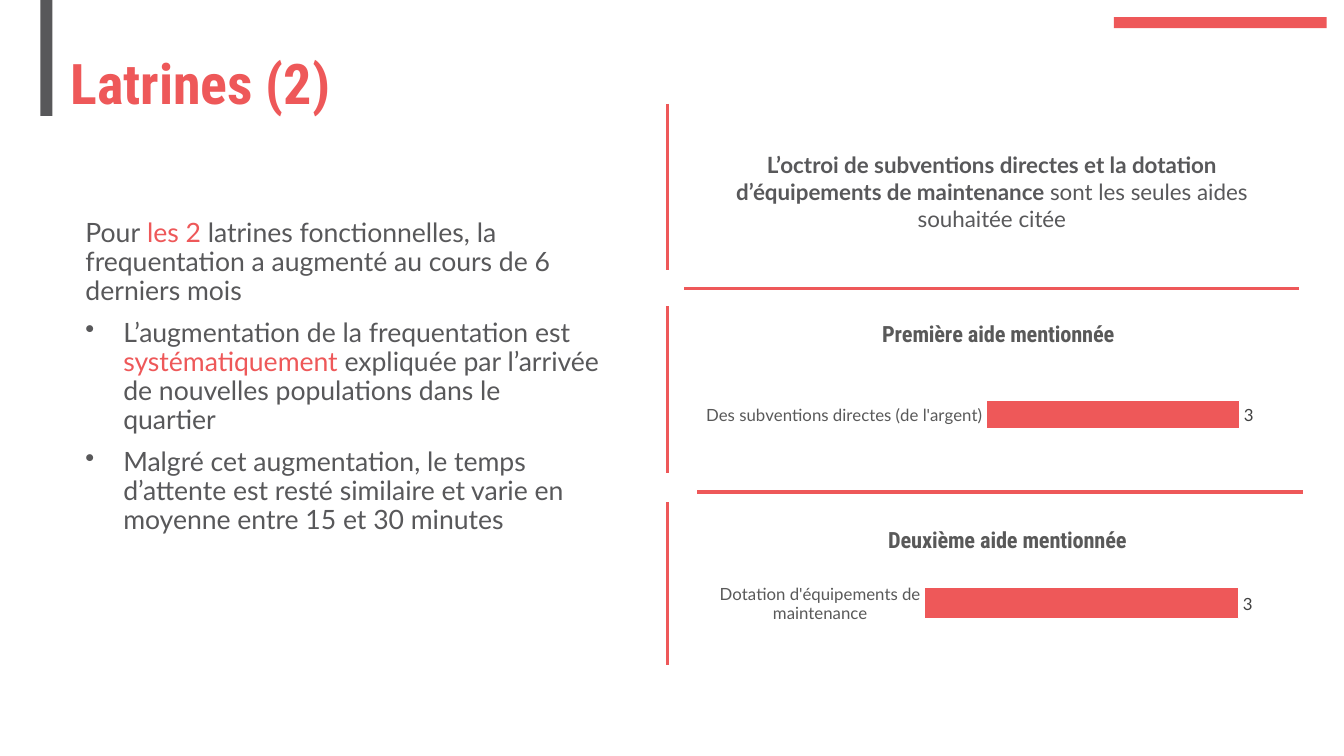
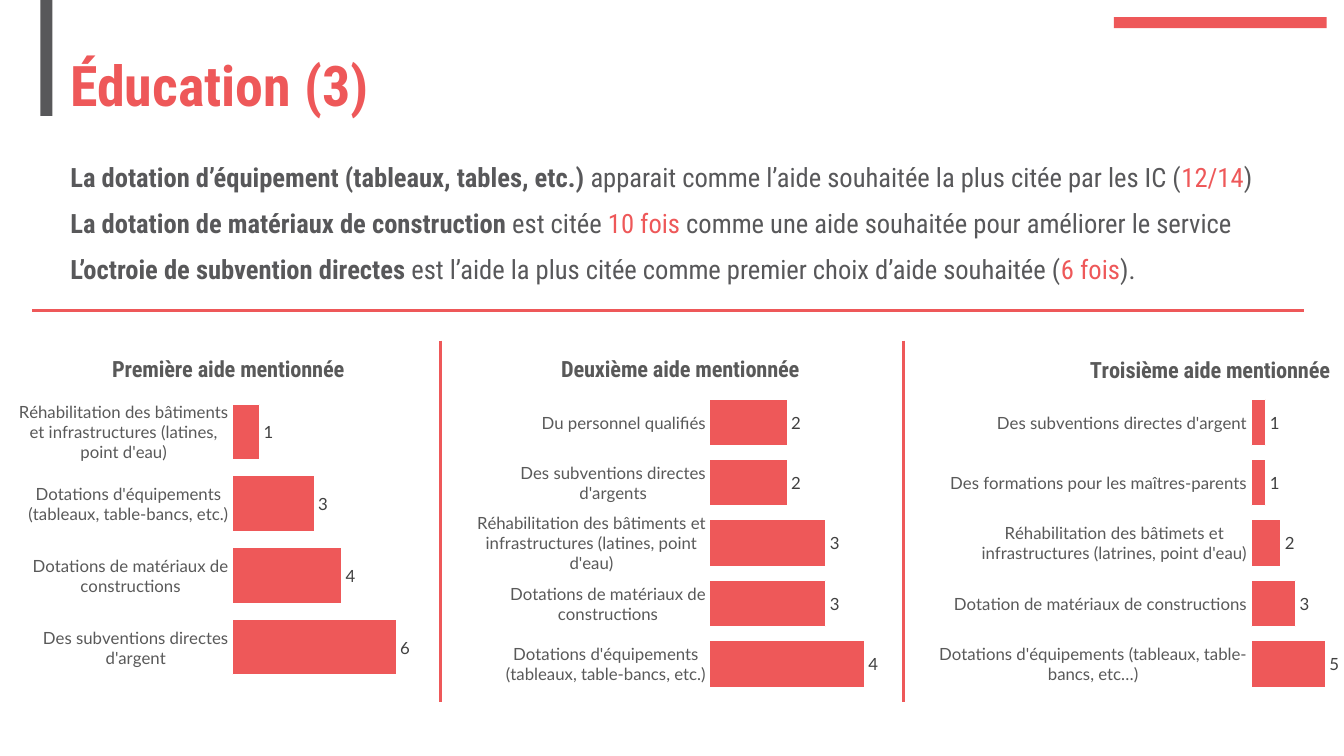
"""Build two survey slides: latrines and education."""
import pptx
import pptx.chart.data
import pptx.dml.color
import pptx.enum.chart
import pptx.enum.shapes
import pptx.enum.text
import pptx.oxml
import pptx.oxml.ns
import pptx.util
from lxml import etree

Pt = pptx.util.Pt
RGBColor = pptx.dml.color.RGBColor
qn = pptx.oxml.ns.qn

RED = RGBColor(0xEE, 0x58, 0x59)
GREY = RGBColor(0x58, 0x58, 0x5A)
AXIS_GREY = RGBColor(0x59, 0x59, 0x59)
LABEL_GREY = RGBColor(0x40, 0x40, 0x40)
WHITE = RGBColor(0xFF, 0xFF, 0xFF)
BODY_FONT = "Lato"
HEAD_FONT = "Roboto Condensed"
BULLET_INDENT = 27

BANDS = [((795.6, 12.2, 152, 7.9), RED), ((28.8, 0, 8.6, 82.8), GREY)]
MIDDLE = 476.6
COLUMN_STEP = 322.9


def column_frame(index):
    """Return the frame of one of the three education charts."""
    return (11.5 + index * COLUMN_STEP, 241.2, 303.1, 259.9)


SLIDES = [
    {
        "title": "Latrines (2)",
        "title_height": 46.1,
        "texts": [
            {
                "frame": (495.4, 104.4, 426.2, 87.8), "font": BODY_FONT, "size": 16,
                "align": pptx.enum.text.PP_ALIGN.CENTER, "spacing": 1.0,
                "paras": [
                    (False, [("L’octroi de subventions directes et la dotation d’équipements de maintenance ", "bold"),
                             ("sont les seules aides souhaitée citée", "plain")]),
                ],
            },
            {
                "frame": (54, 153.4, 381.6, 233.3), "font": BODY_FONT, "size": 19,
                "align": pptx.enum.text.PP_ALIGN.LEFT, "spacing": 0.9,
                "paras": [
                    (False, [("Pour", "plain"), (" les 2 ", "red"),
                             ("latrines fonctionnelles, la frequentation a augmenté au cours de 6 derniers mois", "plain")]),
                    (True, [("L’augmentation de la frequentation est ", "plain"), ("systématiquement ", "red"),
                            ("expliquée par l’arrivée de nouvelles populations dans le quartier", "plain")]),
                    (True, [("Malgré cet augmentation, le temps d’attente est resté similaire et varie "
                             "en moyenne entre 15 et 30 minutes", "plain")]),
                ],
            },
        ],
        "charts": [
            {
                "title": "Première aide mentionnée", "frame": (501.8, 218.9, 422.6, 126),
                "plot": (0.48, 0.51, 0.5, 0.41), "top": 3.5,
                "bars": [("", None), ("Des subventions directes (de l'argent)", 3)],
            },
            {
                "title": "Deuxième aide mentionnée", "frame": (508.3, 366.5, 422.6, 108.7),
                "plot": (0.36, 0.46, 0.62, 0.53), "top": 3.5,
                "bars": [("", None), ("Dotation d'équipements de maintenance", 3)],
            },
        ],
        "rules": [
            (MIDDLE, 74.2, MIDDLE, 193), (MIDDLE, 218.9, MIDDLE, 337.7), (MIDDLE, 358.6, MIDDLE, 475.2),
            (488.9, 205.9, 928.1, 205.9), (498.2, 351.4, 931, 351.4),
        ],
    },
    {
        "title": "Éducation (3)",
        "title_height": 48.2,
        "texts": [
            {
                "frame": (43.2, 111.6, 882, 103.7), "font": HEAD_FONT, "size": 19,
                "align": pptx.enum.text.PP_ALIGN.LEFT, "spacing": 1.0,
                "paras": [
                    (False, [("La dotation d’équipement (tableaux, tables, etc.) ", "bold"),
                             ("apparait comme l’aide souhaitée la plus citée par les IC (", "plain"),
                             ("12/14", "red"), (")", "plain")]),
                    (False, [("La dotation de matériaux de construction ", "bold"), ("est citée ", "plain"),
                             ("10 fois ", "red"), ("comme une aide souhaitée pour améliorer le service", "plain")]),
                    (False, [("L’octroie de subvention directes ", "bold"),
                             ("est l’aide la plus citée comme premier choix d’aide souhaitée (", "plain"),
                             ("6 fois", "red"), (").", "plain")]),
                ],
            },
        ],
        "charts": [
            {
                "title": "Première aide mentionnée", "frame": column_frame(0),
                "plot": (0.51, 0.16, 0.45, 0.79), "top": 7,
                "bars": [
                    ("Des subventions directes d'argent", 6),
                    ("Dotations de matériaux de constructions", 4),
                    ("Dotations d'équipements (tableaux, table-bancs, etc.)", 3),
                    ("Réhabilitation des bâtiments et infrastructures (latines, point d'eau)", 1),
                ],
            },
            {
                "title": "Deuxième aide mentionnée", "frame": column_frame(1),
                "plot": (0.57, 0.15, 0.41, 0.83), "top": 4.5,
                "bars": [
                    ("Dotations d'équipements (tableaux, table-bancs, etc.)", 4),
                    ("Dotations de matériaux de constructions", 3),
                    ("Réhabilitation des bâtiments et infrastructures (latines, point d'eau)", 3),
                    ("Des subventions directes d'argents", 2),
                    ("Du personnel qualifiés", 2),
                ],
            },
            {
                "title": "Troisième aide mentionnée", "frame": column_frame(2),
                "plot": (0.78, 0.15, 0.21, 0.83), "top": 6, "title_at": (0.39, 0.04),
                "bars": [
                    ("Dotations d'équipements (tableaux, table-bancs, etc…)", 5),
                    ("Dotation de matériaux de constructions", 3),
                    ("Réhabilitation des bâtimets et infrastructures (latrines, point d'eau)", 2),
                    ("Des formations pour les maîtres-parents", 1),
                    ("Des subventions directes d'argent", 1),
                ],
            },
        ],
        "rules": [
            (314.6, 243.4, 314.6, 501.1), (645.1, 243.4, 645.1, 501.1), (23, 221.8, 931.7, 221.8),
        ],
    },
]


def points(values):
    """Convert plain numbers to point lengths."""
    return [Pt(value) for value in values]


def style_font(font, name, size, color, bold=False):
    """Set the main properties of a font."""
    font.name, font.size, font.bold = name, Pt(size), bold
    font.color.rgb = color


def add_span(para, text, name, size, color, bold):
    """Append one styled run."""
    span = para.add_run()
    span.text = text
    style_font(span.font, name, size, color, bold)


def add_bullet(para):
    """Give a paragraph a hanging round bullet."""
    properties = para._p.get_or_add_pPr()
    properties.set("marL", str(Pt(BULLET_INDENT)))
    properties.set("indent", str(-Pt(BULLET_INDENT)))
    etree.SubElement(properties, qn("a:buChar")).set("char", "•")


def add_frame(page):
    """Draw the bands shared by the slides."""
    for place, color in BANDS:
        band = page.shapes.add_shape(pptx.enum.shapes.MSO_SHAPE.RECTANGLE, *points(place))
        band.shadow.inherit = False
        band.fill.solid()
        band.fill.fore_color.rgb = color
        band.line.fill.background()


def add_title(page, text, height):
    """Write the slide title."""
    box = page.shapes.add_textbox(*points((43.2, 38.9, 350.6, height)))
    box.text_frame.word_wrap = True
    box.text_frame.vertical_anchor = pptx.enum.text.MSO_ANCHOR.MIDDLE
    para = box.text_frame.paragraphs[0]
    para.line_spacing = 0.9
    add_span(para, text, HEAD_FONT, 40, RED, True)


def add_text(page, block):
    """Write a block of paragraphs."""
    box = page.shapes.add_textbox(*points(block["frame"]))
    frame = box.text_frame
    frame.word_wrap = True
    for index, (bulleted, spans) in enumerate(block["paras"]):
        para = frame.add_paragraph() if index else frame.paragraphs[0]
        para.alignment = block["align"]
        para.line_spacing = block["spacing"]
        if index:
            para.space_before = Pt(10)
        if bulleted:
            add_bullet(para)
        for text, style in spans:
            color = RED if style == "red" else GREY
            add_span(para, text, block["font"], block["size"], color, style == "bold")


def set_layout(parent, position, values, target=None):
    """Place a chart part by fractions of the chart area."""
    for old in parent.findall(qn("c:layout")):
        parent.remove(old)
    layout = etree.Element(qn("c:layout"))
    parent.insert(position, layout)
    manual = etree.SubElement(layout, qn("c:manualLayout"))
    settings = [("layoutTarget", target)] if target else []
    settings += [("xMode", "edge"), ("yMode", "edge")]
    settings += list(zip("xywh", values))
    for name, value in settings:
        etree.SubElement(manual, qn("c:" + name)).set("val", str(value))


def add_bars(page, item):
    """Add a horizontal bar chart with value labels."""
    data = pptx.chart.data.CategoryChartData()
    data.categories = [name for name, value in item["bars"]]
    data.add_series("Series 1", [value for name, value in item["bars"]])
    kind = pptx.enum.chart.XL_CHART_TYPE.BAR_CLUSTERED
    chart = page.shapes.add_chart(kind, *points(item["frame"]), data).chart
    style_font(chart.font, BODY_FONT, 12, AXIS_GREY)
    chart.has_legend = False
    chart.has_title = True
    para = chart.chart_title.text_frame.paragraphs[0]
    add_span(para, item["title"], HEAD_FONT, 16, AXIS_GREY, True)
    if "title_at" in item:
        set_layout(chart.chart_title._element, 1, item["title_at"])

    names = chart.category_axis
    names.major_tick_mark = names.minor_tick_mark = pptx.enum.chart.XL_TICK_MARK.NONE
    names.format.line.fill.background()
    style_font(names.tick_labels.font, BODY_FONT, 12, AXIS_GREY)
    scale = chart.value_axis
    scale.visible = scale.has_major_gridlines = False
    scale.minimum_scale, scale.maximum_scale = 0, item["top"]

    plot = chart.plots[0]
    plot.gap_width = 30
    plot.vary_by_categories = False
    series = plot.series[0]
    series.format.fill.solid()
    series.format.fill.fore_color.rgb = RED
    series.format.line.color.rgb = WHITE
    series.format.line.width = Pt(0.75)
    labels = series.data_labels
    labels.show_value = True
    labels.position = pptx.enum.chart.XL_LABEL_POSITION.OUTSIDE_END
    style_font(labels.font, BODY_FONT, 12, LABEL_GREY)
    area = chart._chartSpace.find(qn("c:chart")).find(qn("c:plotArea"))
    set_layout(area, 0, item["plot"], "inner")


def add_rule(page, ends):
    """Draw a red separator line."""
    rule = page.shapes.add_connector(pptx.enum.shapes.MSO_CONNECTOR.STRAIGHT, *points(ends))
    rule.line.color.rgb = RED
    rule.line.width = Pt(2.25)
    etree.SubElement(rule._element.spPr, qn("a:effectLst"))


def main():
    """Build and save the deck."""
    deck = pptx.Presentation()
    deck.slide_width, deck.slide_height = Pt(960), Pt(540)
    for content in SLIDES:
        page = deck.slides.add_slide(deck.slide_layouts[6])
        add_frame(page)
        add_title(page, content["title"], content["title_height"])
        for item in content["charts"]:
            add_bars(page, item)
        for block in content["texts"]:
            add_text(page, block)
        for ends in content["rules"]:
            add_rule(page, ends)
    deck.save("out.pptx")


if __name__ == "__main__":
    main()
